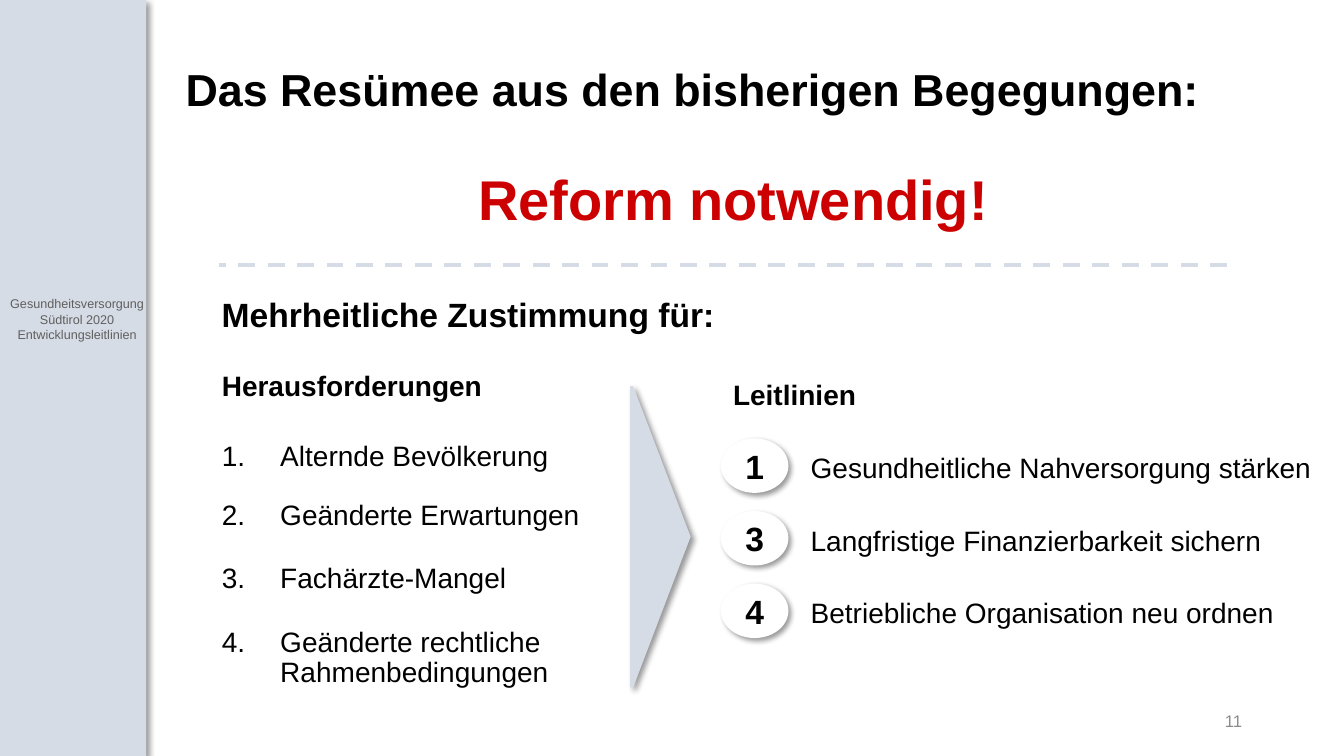
from lxml import etree
from pptx import Presentation
from pptx.dml.color import RGBColor
from pptx.enum.dml import MSO_LINE
from pptx.enum.shapes import MSO_CONNECTOR, MSO_SHAPE
from pptx.enum.text import MSO_ANCHOR, PP_ALIGN
from pptx.oxml.ns import qn
from pptx.util import Inches, Pt

FONT = "Arial"
COLORS = {"panel": "D6DCE5", "white": "FFFFFF", "black": "000000",
          "red": "CC0000", "sidebar": "5F5F5F", "page": "8C8C8C"}
LEFT, CENTER, RIGHT = PP_ALIGN.LEFT, PP_ALIGN.CENTER, PP_ALIGN.RIGHT
TOP, MIDDLE = MSO_ANCHOR.TOP, MSO_ANCHOR.MIDDLE
RECTANGLE, OVAL, PENTAGON = MSO_SHAPE.RECTANGLE, MSO_SHAPE.OVAL, MSO_SHAPE.PENTAGON
STRAIGHT, DASH = MSO_CONNECTOR.STRAIGHT, MSO_LINE.DASH

CHALLENGES = [  # text, line spacing, space after
    ("Alternde Bevölkerung", 1.0, 18),
    ("Geänderte Erwartungen", 1.0, 24),
    ("Fachärzte-Mangel", 0.9, 24),
    ("Geänderte rechtliche Rahmenbedingungen", 0.9, 0),
]
GUIDELINES = [
    ("1", "Gesundheitliche Nahversorgung stärken"),
    ("3", "Langfristige Finanzierbarkeit sichern"),
    ("4", "Betriebliche Organisation neu ordnen"),
]
GUIDELINE_TOP, GUIDELINE_PITCH = 4.35, 0.72


def color(name):
    return RGBColor.from_string(COLORS[name])


def write(frame, text, size=20, bold=False, ink="black", align=LEFT, spacing=1.0,
          before=0, after=0, margin=0, indent=0, numbered=False):
    """Fill the empty first paragraph of the frame, or append a new one."""
    paragraph = frame.paragraphs[0]
    if paragraph.runs:
        paragraph = frame.add_paragraph()
    paragraph.alignment = align
    paragraph.line_spacing = spacing
    paragraph.space_before, paragraph.space_after = Pt(before), Pt(after)
    properties = paragraph._p.get_or_add_pPr()
    properties.set("marL", str(Inches(margin)))
    properties.set("indent", str(Inches(indent)))
    if numbered:
        etree.SubElement(properties, qn("a:buAutoNum"), type="arabicPeriod")
    run = paragraph.add_run()
    run.text = text
    run.font.name, run.font.size, run.font.bold = FONT, Pt(size), bold
    run.font.color.rgb = color(ink)


def set_frame(frame, anchor, side=0.1):
    frame.word_wrap = True
    frame.vertical_anchor = anchor
    frame.margin_left = frame.margin_right = Inches(side)
    frame.margin_top = frame.margin_bottom = Inches(0.05)


def add_text_box(slide, left, top, width, height, anchor=TOP, side=0.1):
    box = slide.shapes.add_textbox(Inches(left), Inches(top), Inches(width), Inches(height))
    set_frame(box.text_frame, anchor, side)
    return box.text_frame


def add_shadow_shape(slide, kind, left, top, width, height, fill):
    shape = slide.shapes.add_shape(
        kind, Inches(left), Inches(top), Inches(width), Inches(height))
    shape.fill.solid()
    shape.fill.fore_color.rgb = color(fill)
    shape.line.fill.background()
    shape.shadow.inherit = False
    effects = shape._element.spPr.find(qn("a:effectLst"))
    shadow = etree.SubElement(effects, qn("a:outerShdw"), blurRad=str(Pt(4)),
                              dist=str(Pt(3)), dir="2700000", algn="tl", rotWithShape="0")
    shade = etree.SubElement(shadow, qn("a:srgbClr"), val=COLORS["black"])
    etree.SubElement(shade, qn("a:alpha"), val="40000")
    return shape


def add_dashed_rule(slide, start, end, top):
    rule = slide.shapes.add_connector(
        STRAIGHT, Inches(start), Inches(top), Inches(end), Inches(top))
    rule.line.color.rgb = color("panel")
    rule.line.width = Pt(3)
    rule.line.dash_style = DASH
    etree.SubElement(rule._element.spPr, qn("a:effectLst"))


def add_sidebar(slide):
    add_shadow_shape(slide, RECTANGLE, 0, 0, 1.45, 7.5, "panel")
    frame = add_text_box(slide, 0, 2.89, 1.53, 0.7, side=0.05)
    for text in ("Gesundheitsversorgung Südtirol 2020", "Entwicklungsleitlinien"):
        write(frame, text, size=9, ink="sidebar", align=CENTER)


def add_title(slide, text):
    title = slide.shapes.title
    title.left, title.top = Inches(1.74), Inches(0.4)
    title.width, title.height = Inches(11.11), Inches(1.03)
    set_frame(title.text_frame, MIDDLE)
    write(title.text_frame, text, size=32, bold=True, spacing=0.9)


def add_challenges(slide):
    frame = add_text_box(slide, 2, 3.64, 4.64, 3.22, side=0.2)
    write(frame, "Herausforderungen", bold=True, spacing=0.9, after=26)
    for text, spacing, after in CHALLENGES:
        write(frame, text, spacing=spacing, after=after,
              margin=0.58, indent=-0.58, numbered=True)


def add_guidelines(slide):
    frame = add_text_box(slide, 7.04, 3.73, 6.15, 2.6, side=0)
    write(frame, "Leitlinien", bold=True, spacing=0.9, margin=0.23)
    for index, (number, text) in enumerate(GUIDELINES):
        write(frame, text, spacing=Pt(26), before=26, margin=1)
        badge = add_shadow_shape(slide, OVAL, 7.15, GUIDELINE_TOP + index * GUIDELINE_PITCH,
                                 0.67, 0.54, "white")
        set_frame(badge.text_frame, MIDDLE)
        write(badge.text_frame, number, size=24, bold=True, align=CENTER)


def main():
    presentation = Presentation()
    presentation.slide_width, presentation.slide_height = Inches(13.33), Inches(7.5)
    slide = presentation.slides.add_slide(presentation.slide_layouts[5])

    add_sidebar(slide)
    add_title(slide, "Das Resümee aus den bisherigen Begegungen:")
    message = add_text_box(slide, 2.1, 1.68, 10.34, 0.81, MIDDLE)
    write(message, "Reform notwendig!", size=40, bold=True, ink="red",
          align=CENTER, spacing=Pt(31))
    add_dashed_rule(slide, 12.17, 2.17, 2.63)
    agreement = add_text_box(slide, 2.1, 2.76, 6.73, 0.77, MIDDLE)
    write(agreement, "Mehrheitliche Zustimmung für:", size=24, bold=True, spacing=0.9)

    add_challenges(slide)
    arrow = add_shadow_shape(slide, PENTAGON, 6.25, 3.83, 0.6, 2.99, "panel")
    arrow.adjustments[0] = 0.95
    add_guidelines(slide)
    page = add_text_box(slide, 9.42, 6.95, 3, 0.4, MIDDLE)
    write(page, "11", size=12, ink="page", align=RIGHT)
    presentation.save("out.pptx")


if __name__ == "__main__":
    main()
